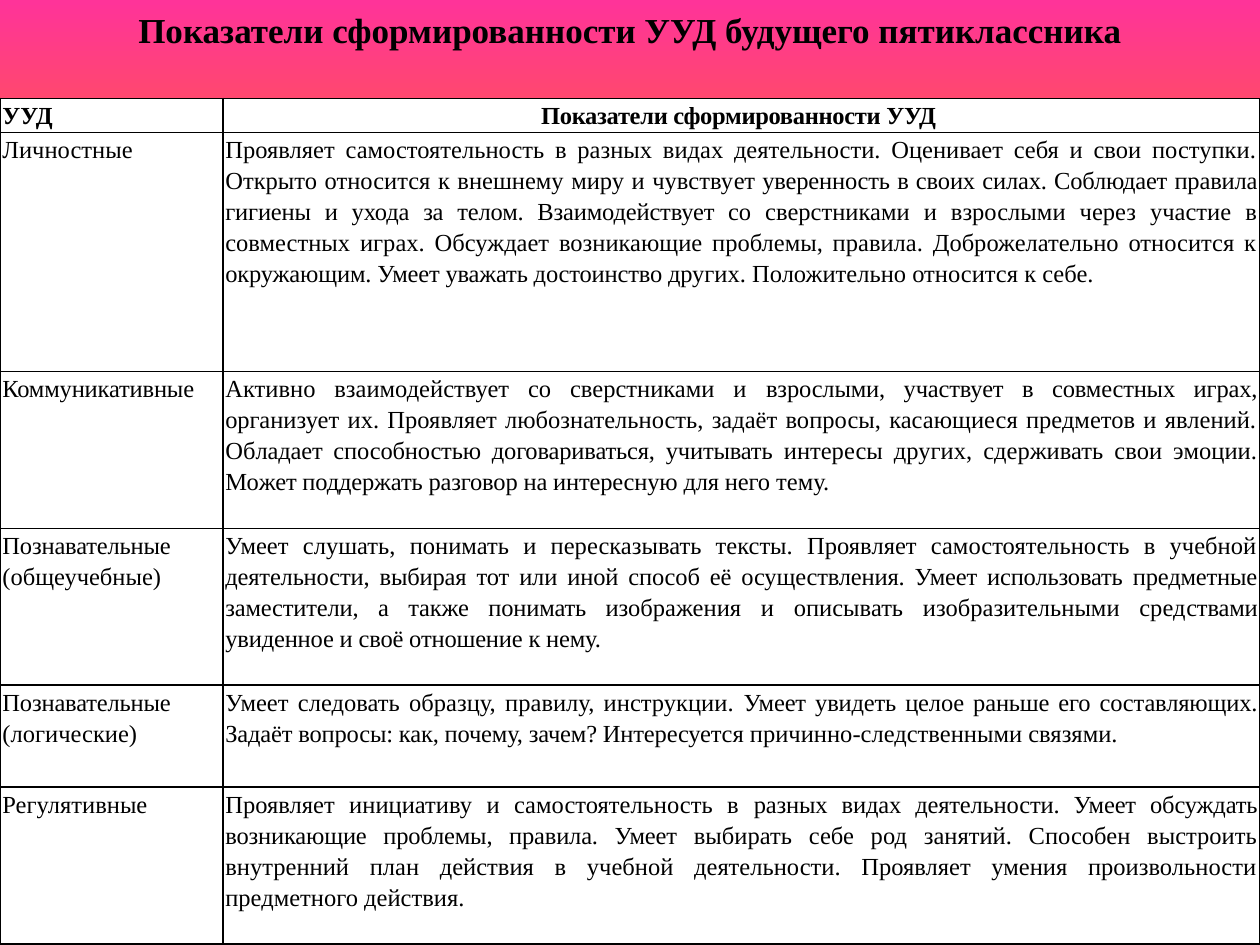
from dataclasses import dataclass

from lxml import etree
from pptx import Presentation
from pptx.dml.color import RGBColor
from pptx.enum.text import MSO_ANCHOR, PP_ALIGN
from pptx.oxml.ns import qn
from pptx.util import Pt

LEFT, CENTER, JUSTIFY = PP_ALIGN.LEFT, PP_ALIGN.CENTER, PP_ALIGN.JUSTIFY
TOP = MSO_ANCHOR.TOP


@dataclass(frozen=True)
class Theme:
    font: str = "Times New Roman"
    ink: str = "000000"
    paper: str = "FFFFFF"
    rainbow: tuple = ("FF3399", "FF6633", "FFFF00", "01A78F", "3366FF")
    title_size: float = 20
    body_size: float = 14
    line_spacing: float = 1.15
    border: float = 1
    cell_inset: float = 1.4


THEME = Theme()
PAGE_WIDTH, PAGE_HEIGHT = 720, 540
TITLE_BOX = (0, 0, PAGE_WIDTH, 53.3)
TABLE_BOX = (0, 56.2, PAGE_WIDTH, 483.4)
COLUMN_WIDTHS = (127.4, 592.6)
ROW_HEIGHTS = (19.4, 136.6, 89.7, 89.7, 58.3, 89.7)

# Letter spacing of a run, in hundredths of a point
EVEN, TIGHT, TIGHTER = 0, -10, -20

TITLE = "Показатели сформированности УУД будущего пятиклассника"
HEADER = (
    [("УУД", EVEN)],
    [("Показатели сформированности УУД ", TIGHTER)],
)
SKILLS = (
    (
        [("Личностные", EVEN)],
        [("Проявляет самостоятельность в разных видах деятельности. Оценивает себя и свои "
          "поступки. Открыто относится к внешнему миру и чувству", EVEN),
         ("ет уверенность в своих силах. Соблюдает правила гигиены и ухода за телом. "
          "Взаимодействует со ", TIGHT),
         ("сверстниками и взрослыми через участие в совместных играх. Обсуждает возникающие "
          "проблемы, правила. Доброжелательно относится к ", EVEN),
         ("окружающим. Умеет уважать достоинство друг", TIGHT),
         ("их. Положительно относится к себе.", EVEN)],
    ),
    (
        [("Коммуникативные", TIGHT)],
        [("Активно взаимодействует со сверстниками и ", EVEN),
         ("взрослыми, участвует в совместных играх, орга", TIGHT),
         ("низует их. Проявляет любознательность, задаёт вопросы, касающиеся предметов и "
          "явлений. Об", EVEN),
         ("ладает способностью договариваться, учитывать ", TIGHT),
         ("интересы других, сдерживать свои эмоции. Мо", EVEN),
         ("жет поддержать разговор на интересную для него ", TIGHT),
         ("тему.", EVEN)],
    ),
    (
        [("Познавательные ", TIGHT), ("(общеучебные)", EVEN)],
        [("Умеет слушать, понимать и пересказывать тексты. Проявляет самостоятельность в "
          "учебной ", EVEN),
         ("деятельности, выбирая тот или иной способ её осуществления. Умеет использовать "
          "предметные заместители, а также понимать изо", TIGHT),
         ("бражения и описывать изобразительными сред", EVEN),
         ("ствами увиденное и своё отношение к нему.", TIGHT)],
    ),
    (
        [("Познавательные ", TIGHT), ("(логические)", EVEN)],
        [("Умеет следовать образцу, правилу, инструкции. ", EVEN),
         ("Умеет увидеть целое раньше его составляющих. Задаёт вопросы: как, почему, зачем? "
          "Интересует", TIGHT),
         ("ся причинно-следственными связями.", EVEN)],
    ),
    (
        [("Регулятивные", EVEN)],
        [("Проявляет инициативу и самостоятельность в ", EVEN),
         ("разных видах деятельности. Умеет обсуждать возникающие проблемы, правила. Умеет ",
          TIGHT),
         ("выбирать себе род занятий. Способен выстроить внутренний план действия в учебной "
          "деятельности. Проявляет умения произвольности предметного действия.", EVEN)],
    ),
)


def paint_background(page):
    """Fill the page from top to bottom with evenly spaced theme colours."""
    fill = page.background.fill
    fill.gradient()
    fill.gradient_angle = 270
    stops = page.background._cSld.find(".//" + qn("a:gsLst"))
    for stop in list(stops):
        stops.remove(stop)
    step = 100000 // (len(THEME.rainbow) - 1)
    for index, color in enumerate(THEME.rainbow):
        stop = etree.SubElement(stops, qn("a:gs"), pos=str(index * step))
        etree.SubElement(stop, qn("a:srgbClr"), val=color)


def add_span(para, text, size, bold=False, spacing=EVEN):
    span = para.add_run()
    span.text = text
    font = span.font
    font.name, font.size, font.bold = THEME.font, Pt(size), bold
    font.color.rgb = RGBColor.from_string(THEME.ink)
    if spacing:
        font._element.set("spc", str(spacing))


def add_title(page, box):
    frame = page.shapes.add_textbox(*map(Pt, box)).text_frame
    frame.word_wrap = True
    frame.vertical_anchor = TOP
    frame.margin_top = Pt(4.8)
    para = frame.paragraphs[0]
    para.alignment = CENTER
    add_span(para, TITLE, THEME.title_size, bold=True)


def add_borders(cell):
    """Draw all four edges; the lines must come before the fill of the cell."""
    properties = cell._tc.get_or_add_tcPr()
    for index, side in enumerate(("a:lnL", "a:lnR", "a:lnT", "a:lnB")):
        line = etree.Element(qn(side), w=str(Pt(THEME.border)))
        solid = etree.SubElement(line, qn("a:solidFill"))
        etree.SubElement(solid, qn("a:srgbClr"), val=THEME.ink)
        properties.insert(index, line)


def fill_cell(cell, spans, alignment, bold):
    cell.fill.solid()
    cell.fill.fore_color.rgb = RGBColor.from_string(THEME.paper)
    add_borders(cell)
    cell.margin_left = cell.margin_right = Pt(THEME.cell_inset)
    cell.margin_top = cell.margin_bottom = 0
    cell.vertical_anchor = TOP
    para = cell.text_frame.paragraphs[0]
    para.alignment = alignment
    para.line_spacing = THEME.line_spacing
    for text, spacing in spans:
        add_span(para, text, THEME.body_size, bold, spacing)


def add_skills_table(page, box):
    rows = (HEADER, *SKILLS)
    table = page.shapes.add_table(len(rows), len(HEADER), *map(Pt, box)).table
    for column, width in zip(table.columns, COLUMN_WIDTHS):
        column.width = Pt(width)
    for row, height in zip(table.rows, ROW_HEIGHTS):
        row.height = Pt(height)
    for row_index, (name, description) in enumerate(rows):
        is_header = row_index == 0
        fill_cell(table.cell(row_index, 0), name, LEFT, is_header)
        fill_cell(table.cell(row_index, 1), description,
                  CENTER if is_header else JUSTIFY, is_header)


def main():
    deck = Presentation()
    deck.slide_width, deck.slide_height = Pt(PAGE_WIDTH), Pt(PAGE_HEIGHT)
    page = deck.slides.add_slide(deck.slide_layouts[6])
    paint_background(page)
    add_skills_table(page, TABLE_BOX)
    add_title(page, TITLE_BOX)
    deck.save("out.pptx")


if __name__ == "__main__":
    main()
